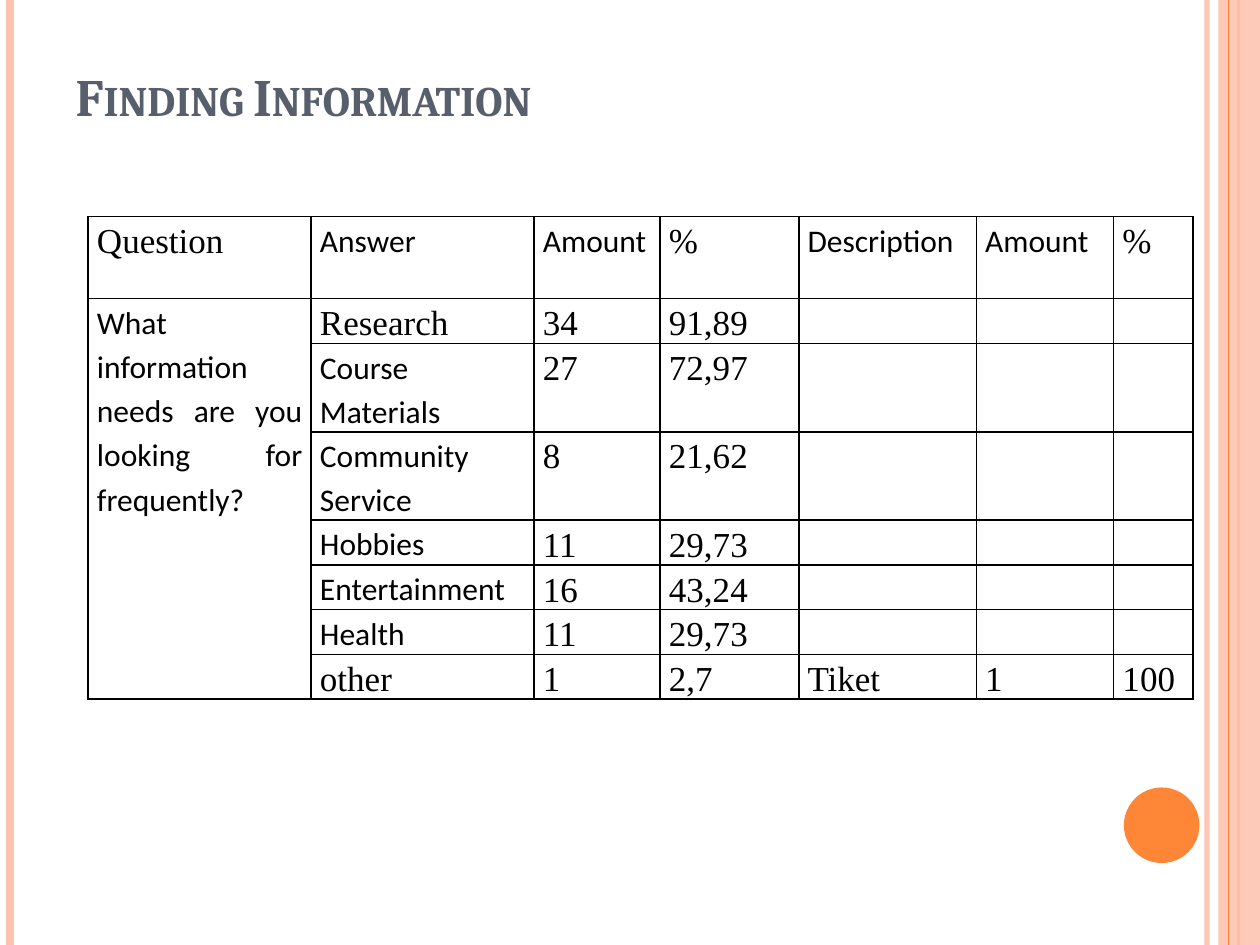
from lxml import etree
from pptx import Presentation
from pptx.dml.color import RGBColor
from pptx.enum.shapes import MSO_CONNECTOR, MSO_SHAPE
from pptx.enum.text import MSO_ANCHOR, PP_ALIGN
from pptx.oxml.ns import qn
from pptx.util import Inches, Pt

STRAIGHT = MSO_CONNECTOR.STRAIGHT
RECTANGLE, OVAL = MSO_SHAPE.RECTANGLE, MSO_SHAPE.OVAL
BOTTOM = MSO_ANCHOR.BOTTOM
LEFT, JUSTIFY = PP_ALIGN.LEFT, PP_ALIGN.JUSTIFY

COLORS = {"peach": "FEC3AE", "orange": "FE8637", "slate": "575F6D", "ink": "000000"}
PAGE_WIDTH, PAGE_HEIGHT = 10, 7.5

SERIF = {"name": "Times New Roman", "size": Pt(20)}
SANS = {"name": "Calibri", "size": Pt(18)}
TITLE_FONT = {"name": "Cambria", "size": Pt(30), "bold": True}
CELL_MARGINS = {
    "margin_left": Inches(0.07),
    "margin_right": Inches(0.07),
    "margin_top": 0,
    "margin_bottom": 0,
}

STRIPES = [
    (9.58, "peach", 3, 93),
    (0.08, "peach", 4.5, 100),
    (9.83, "orange", 1.5, 100),
]
COLUMN_WIDTHS = [1.77, 1.77, 1, 1.1, 1.41, 1.09, 0.63]
ROW_HEIGHTS = [0.65, 0.35, 0.65, 0.65, 0.35, 0.35, 0.35, 0.35]
QUESTION = "What information needs are you looking for frequently?"
ROWS = [
    ["Question", "Answer", "Amount", "%", "Description", "Amount", "%"],
    [QUESTION, "Research", "34", "91,89"],
    ["", "Course Materials", "27", "72,97"],
    ["", "Community Service", "8", "21,62"],
    ["", "Hobbies", "11", "29,73"],
    ["", "Entertainment", "16", "43,24"],
    ["", "Health", "11", "29,73"],
    ["", "other", "1", "2,7", "Tiket", "1", "100"],
]
SANS_TEXTS = {
    "Answer", "Amount", "Description", QUESTION, "Course Materials",
    "Community Service", "Hobbies", "Entertainment", "Health",
}


def rgb(color):
    return RGBColor.from_string(COLORS[color])


def apply(target, values):
    for name, value in values.items():
        setattr(target, name, value)


def set_opacity(element, percent):
    if percent < 100:
        for color in element.iter(qn("a:srgbClr")):
            etree.SubElement(color, qn("a:alpha"), val=str(percent * 1000))


def add_stripe(page, left, color, width, opacity=100):
    stripe = page.shapes.add_connector(
        STRAIGHT, Inches(left), 0, Inches(left), Inches(PAGE_HEIGHT)
    )
    stripe.line.color.rgb = rgb(color)
    stripe.line.width = Pt(width)
    properties = stripe.line._get_or_add_ln().getparent()
    set_opacity(properties, opacity)
    etree.SubElement(properties, qn("a:effectLst"))


def add_block(page, kind, bounds, color, opacity=100):
    block = page.shapes.add_shape(kind, *(Inches(value) for value in bounds))
    block.shadow.inherit = False
    block.fill.solid()
    block.fill.fore_color.rgb = rgb(color)
    block.line.fill.background()
    set_opacity(block._element.spPr, opacity)


def write(para, text, font, color):
    span = para.add_run()
    span.text = text
    apply(span.font, font)
    span.font.color.rgb = rgb(color)
    return span


def set_title(page, text):
    title = page.shapes.title
    apply(title, {
        "left": Inches(0.5), "top": Inches(0.3),
        "width": Inches(8.17), "height": Inches(1.25),
    })
    frame = title.text_frame
    apply(frame, {
        "vertical_anchor": BOTTOM, "word_wrap": True, "margin_bottom": Inches(0.54),
    })
    para = frame.paragraphs[0]
    para.alignment = LEFT
    span = write(para, text, TITLE_FONT, "slate")
    span.font._element.set("cap", "small")


def set_borders(cell):
    properties = cell._tc.get_or_add_tcPr()
    for side in ("a:lnL", "a:lnR", "a:lnT", "a:lnB"):
        border = etree.SubElement(properties, qn(side), w=str(Pt(1)))
        fill = etree.SubElement(border, qn("a:solidFill"))
        etree.SubElement(fill, qn("a:srgbClr"), val=COLORS["ink"])


def format_cell(cell, text):
    apply(cell, CELL_MARGINS)
    set_borders(cell)
    cell.fill.background()
    para = cell.text_frame.paragraphs[0]
    apply(para, {"alignment": JUSTIFY, "line_spacing": 1.15})
    if text:
        write(para, text, SANS if text in SANS_TEXTS else SERIF, "ink")


def add_answer_table(page):
    table = page.shapes.add_table(
        len(ROWS), len(COLUMN_WIDTHS), Inches(0.7), Inches(1.72),
        Inches(sum(COLUMN_WIDTHS)), Inches(sum(ROW_HEIGHTS)),
    ).table
    apply(table, {"first_row": False, "horz_banding": False})
    for column, width in zip(table.columns, COLUMN_WIDTHS):
        column.width = Inches(width)
    for row, height, texts in zip(table.rows, ROW_HEIGHTS, ROWS):
        row.height = Inches(height)
        for index, cell in enumerate(row.cells):
            format_cell(cell, texts[index] if index < len(texts) else "")
    table.cell(1, 0).merge(table.cell(len(ROWS) - 1, 0))


def main():
    deck = Presentation()
    deck.slide_width, deck.slide_height = Inches(PAGE_WIDTH), Inches(PAGE_HEIGHT)
    page = deck.slides.add_slide(deck.slide_layouts[5])
    for stripe in STRIPES:
        add_stripe(page, *stripe)
    add_block(page, RECTANGLE, (9.67, 0, 0.33, PAGE_HEIGHT), "peach", 87)
    add_stripe(page, 9.75, "orange", 0.75)
    add_block(page, OVAL, (8.92, 6.25, 0.6, 0.6), "orange")
    set_title(page, "Finding Information")
    add_answer_table(page)
    deck.save("out.pptx")


if __name__ == "__main__":
    main()
